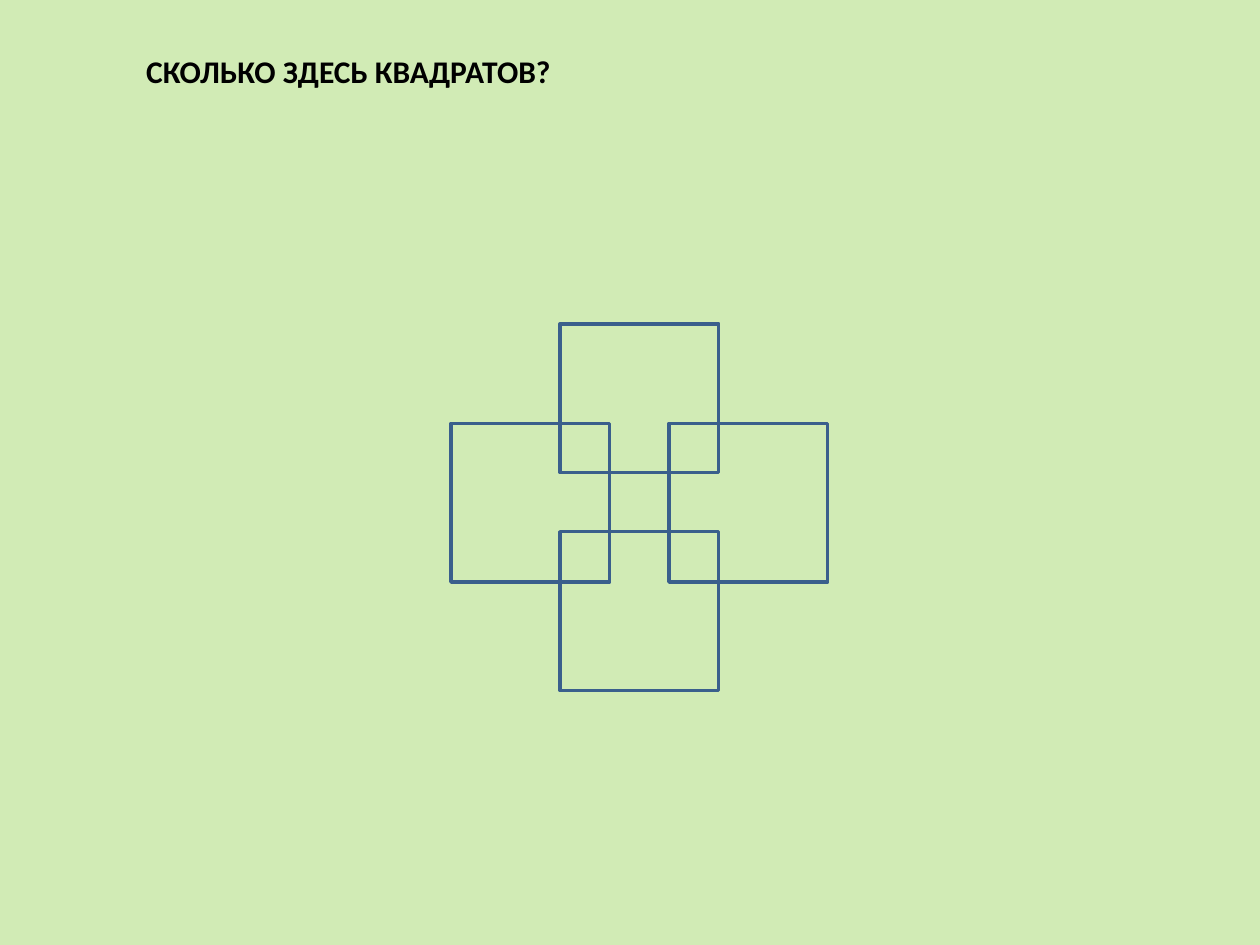
import dataclasses

import pptx
import pptx.dml.color
import pptx.enum.shapes
import pptx.enum.text
import pptx.util


@dataclasses.dataclass(frozen=True)
class Theme:
    """Colours, font and sizes of the slide."""

    back: str = "D1EBB5"
    ink: str = "000000"
    edge: str = "3A5F8C"
    font: str = "Calibri"
    head: int = 18
    line: int = 2


class Board:
    """Draws styled elements on a grid of 100 columns and 75 rows."""

    def __init__(self, deck, theme):
        self.theme = theme
        self.cell = deck.slide_width / 100
        self.slide = deck.slides.add_slide(deck.slide_layouts[5])
        fill = self.slide.background.fill
        fill.solid()
        fill.fore_color.rgb = self.tint(theme.back)

    def tint(self, code):
        return pptx.dml.color.RGBColor.from_string(code)

    def span(self, *cells):
        return [pptx.util.Emu(round(n * self.cell)) for n in cells]

    def title(self, text, *box):
        shape = self.slide.shapes.title
        shape.left, shape.top, shape.width, shape.height = self.span(*box)
        frame = shape.text_frame
        frame.text = text
        frame.word_wrap = True
        frame.auto_size = pptx.enum.text.MSO_AUTO_SIZE.NONE
        frame.vertical_anchor = pptx.enum.text.MSO_ANCHOR.TOP
        para = frame.paragraphs[0]
        para.alignment = pptx.enum.text.PP_ALIGN.LEFT
        para.font.name = self.theme.font
        para.font.size = pptx.util.Pt(self.theme.head)
        para.font.bold = True
        para.font.color.rgb = self.tint(self.theme.ink)

    def square(self, *box):
        kind = pptx.enum.shapes.MSO_SHAPE.RECTANGLE
        shape = self.slide.shapes.add_shape(kind, *self.span(*box))
        shape.shadow.inherit = False
        shape.fill.background()
        shape.line.color.rgb = self.tint(self.theme.edge)
        shape.line.width = pptx.util.Pt(self.theme.line)


def main():
    deck = pptx.Presentation()
    deck.slide_width = pptx.util.Inches(10)
    deck.slide_height = pptx.util.Inches(7.5)
    board = Board(deck, Theme())
    board.title("СКОЛЬКО ЗДЕСЬ КВАДРАТОВ?", 10.6, 3.6, 85, 14.9)

    side, step = 12.6, 8.65
    left, mid, right = (35.8 + step * n for n in range(3))
    top, row, low = 25.7, 33.6, 42.2
    board.square(mid, top, side, 11.8)
    for col, line in ((mid, low), (right, row), (left, row)):
        board.square(col, line, side, side)
    deck.save("out.pptx")


if __name__ == "__main__":
    main()
